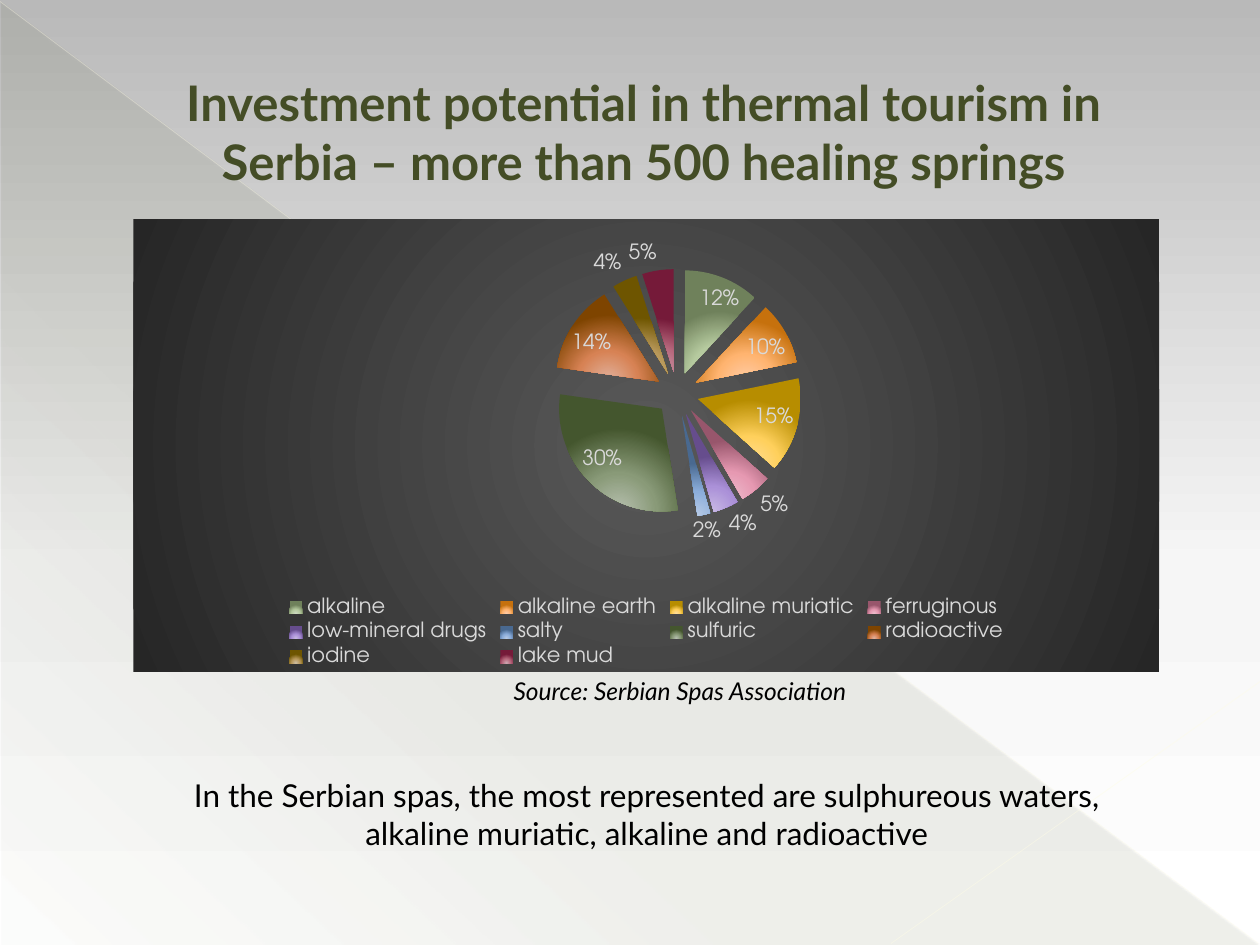
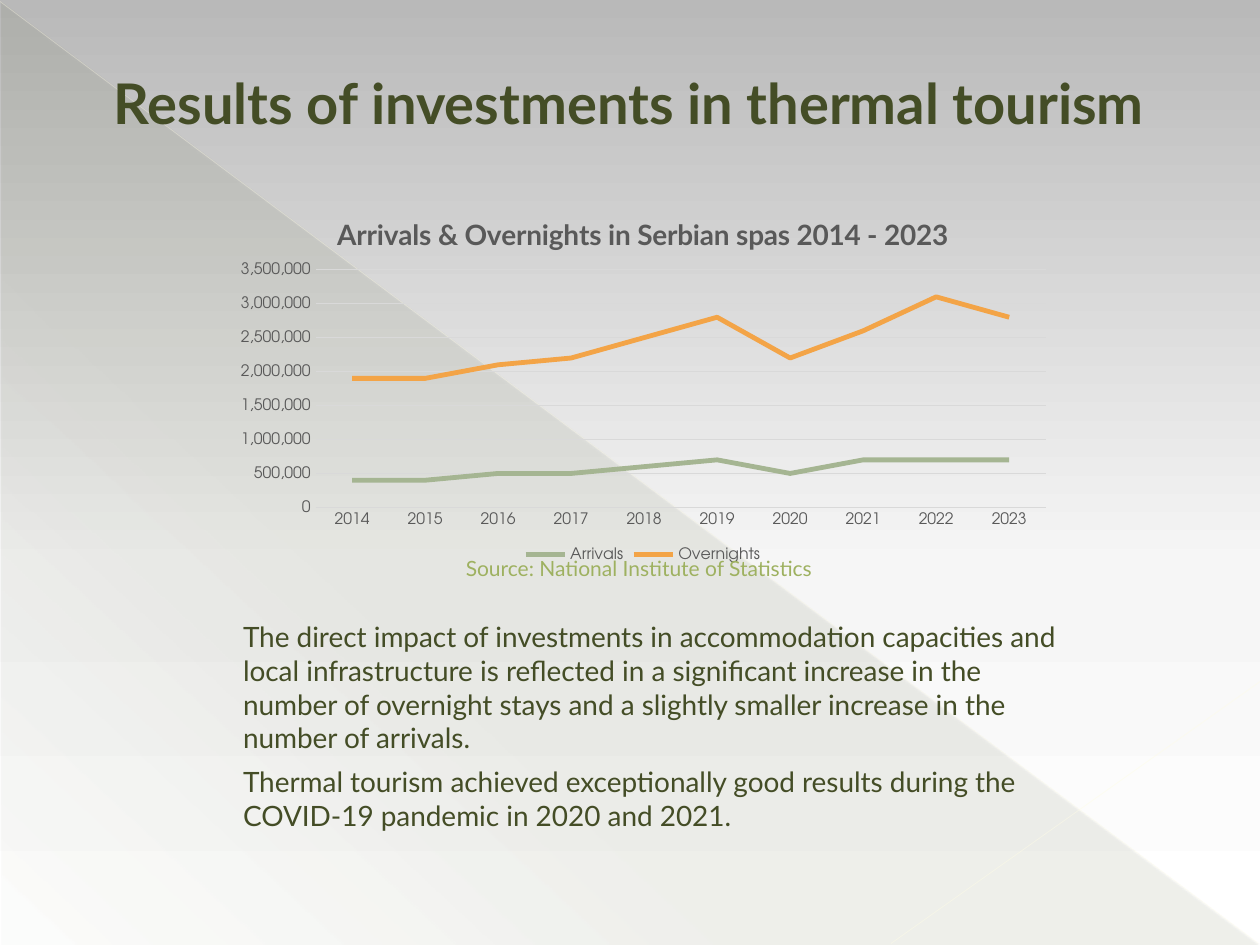
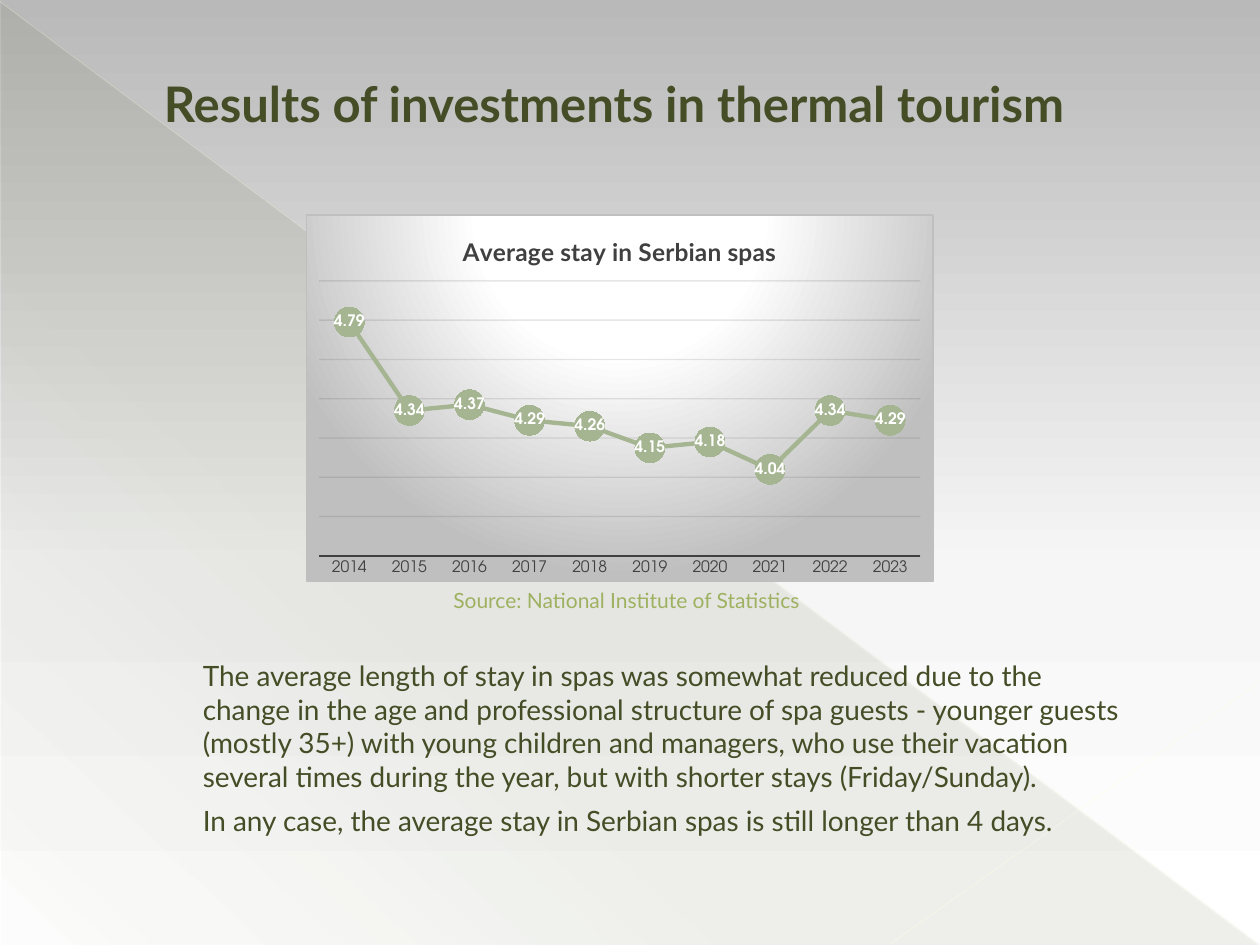
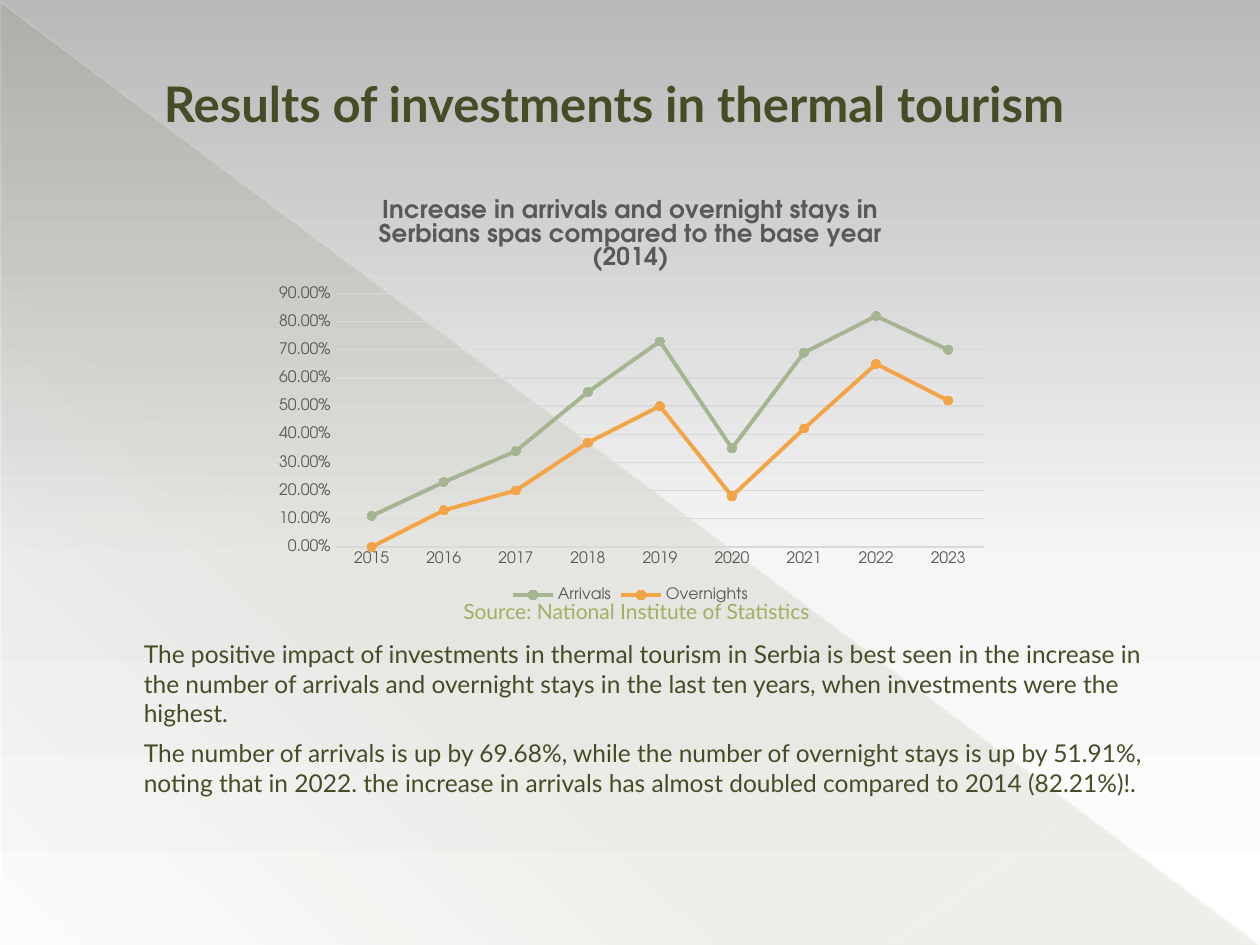
from collections import namedtuple

from pptx import Presentation
from pptx.chart.data import CategoryChartData
from pptx.dml import color, fill as fills, line as lines
from pptx.enum import chart as ch, shapes as sh, text as tx
from pptx.oxml import xmlchemy
from pptx.oxml.ns import qn
from pptx.util import Cm, Pt

RGB = color.RGBColor
Box = namedtuple("Box", "left top width height")
Stop = namedtuple("Stop", "place color alpha", defaults=(100,))
Area = namedtuple("Area", "x y w h")

OLIVE = RGB(0x44, 0x4D, 0x26)
MOSS = RGB(0x9E, 0xB1, 0x60)
SAGE = RGB(0xA5, 0xB5, 0x92)
ORANGE = RGB(0xF3, 0xA4, 0x47)
CREAM = RGB(0xFF, 0xFD, 0xE3)
PALE_CREAM = RGB(0xFF, 0xFD, 0xE6)
BLACK = RGB(0, 0, 0)
INK = RGB(0x0D, 0x0D, 0x0D)
CHARCOAL = RGB(0x26, 0x26, 0x26)
DARK_GREY = RGB(0x40, 0x40, 0x40)
GREY = RGB(0x59, 0x59, 0x59)
MIST = RGB(0xB9, 0xB9, 0xB9)
SILVER = RGB(0xBF, 0xBF, 0xBF)
LIGHT_GREY = RGB(0xD9, 0xD9, 0xD9)
SNOW = RGB(0xF6, 0xF6, 0xF6)
WHITE = RGB(0xFF, 0xFF, 0xFF)

TEXT_FONT = "Lato"
CHART_FONT = "TeX Gyre Adventor"
INDENT = Cm(1.35)
RESULTS_TITLE = "Results of investments in thermal tourism"
STATISTICS = "Source: National Institute of Statistics"
YEARS = [str(year) for year in range(2014, 2024)]

SPRINGS = [
    ("alkaline", 12, "CFDBC3", "B6CA9F", "6F815B"),
    ("alkaline earth", 10, "FFCEAA", "FFB470", "C6710D"),
    ("alkaline muriatic", 15, "FFDF9F", "FFD05C", "B78D00"),
    ("ferruginous", 5, "EDBECD", "E699B2", "98566C"),
    ("low-mineral drugs", 4, "C9BAE4", "AB91D8", "664D8D"),
    ("salty", 2, "B8CBE6", "8CAEDB", "496990"),
    ("sulfuric", 30, "B7C0B0", "899A78", "44562E"),
    ("radioactive", 14, "E1B39F", "D78254", "7E4400"),
    ("iodine", 4, "D0BFA3", "B9995B", "6E5500"),
    ("lake mud", 5, "CFA8B2", "B8697E", "751A39"),
]


def child(parent, tag, **attributes):
    """Append an XML element with the given attributes."""
    element = xmlchemy.OxmlElement(tag)
    for name, value in attributes.items():
        element.set(name, str(value))
    parent.append(element)
    return element


def add_alpha(rgb_element, percent):
    """Make a colour element partly transparent."""
    child(rgb_element, "a:alpha", val=percent * 1000)


def paint_gradient(fill, stops, angle=None, focus=None):
    """Fill with a linear gradient, or a circular one around a focus."""
    fill.solid()
    gradient = xmlchemy.OxmlElement("a:gradFill")
    gradient.set("rotWithShape", "1")
    stop_list = child(gradient, "a:gsLst")
    for stop in stops:
        mark = child(stop_list, "a:gs", pos=stop.place * 1000)
        tone = child(mark, "a:srgbClr", val=stop.color)
        if stop.alpha < 100:
            add_alpha(tone, stop.alpha)
    if focus:
        circle = child(gradient, "a:path", path="circle")
        sides = {side: percent * 1000 for side, percent in zip("ltrb", focus)}
        child(circle, "a:fillToRect", **sides)
    else:
        child(gradient, "a:lin", ang=angle * 60000, scaled=0)
    solid = fill._xPr.find(qn("a:solidFill"))
    solid.getparent().replace(solid, gradient)


def style_line(line, tone, width, alpha=100):
    """Set colour, width and opacity of a line."""
    line.color.rgb = tone
    line.width = Pt(width)
    if alpha < 100:
        add_alpha(line._ln.find(".//" + qn("a:srgbClr")), alpha)


def style_font(font, size, tone, name=TEXT_FONT, bold=False, italic=False):
    """Set the look of a font."""
    font.name = name
    font.size = Pt(size)
    font.color.rgb = tone
    font.bold = bold
    font.italic = italic


def decorate_master(master, slide):
    """Give the master its sky gradient, triangle and two thin rays."""
    paint_gradient(master.background.fill,
                   [Stop(0, MIST), Stop(60, SNOW), Stop(100, WHITE)], angle=90)
    triangle = slide.shapes.add_shape(
        sh.MSO_SHAPE.RIGHT_TRIANGLE, Cm(0.03), Cm(0.05), Cm(25.35), Cm(19))
    triangle.shadow.inherit = False
    triangle.line.fill.background()
    paint_gradient(triangle.fill, [Stop(0, OLIVE, 10), Stop(70, OLIVE, 8),
                                   Stop(100, OLIVE, 1)], angle=133)
    decor = [triangle]
    for ends, tone, width, alpha in [
            ((0, 0.03, 25.37, 19.02), CREAM, 0.39, 35),
            ((25.4, 13.74, 17.96, 19.02), PALE_CREAM, 0.47, 45)]:
        ray = slide.shapes.add_connector(
            sh.MSO_CONNECTOR.STRAIGHT, *[Cm(end) for end in ends])
        style_line(ray.line, tone, width, alpha)
        child(ray._element.spPr, "a:effectLst")
        decor.append(ray)
    for order, part in enumerate(decor):
        part._element.xpath(".//p:cNvPr")[0].set("id", str(101 + order))
        master.shapes._spTree.insert(2 + order, part._element)


def place_title(slide, box, words, size, align=tx.PP_ALIGN.LEFT):
    """Move and format the title placeholder."""
    title = slide.shapes.title
    title.left, title.top, title.width, title.height = map(Cm, box)
    frame = title.text_frame
    frame.text = words
    frame.word_wrap = True
    frame.auto_size = tx.MSO_AUTO_SIZE.NONE
    frame.vertical_anchor = tx.MSO_ANCHOR.MIDDLE
    heading = frame.paragraphs[0]
    heading.alignment = align
    heading._p.get_or_add_pPr().set("marL", str(INDENT))
    style_font(heading.runs[0].font, size, OLIVE, bold=True)


def place_text(slide, box, words, size, tone, align=tx.PP_ALIGN.LEFT,
               anchor=tx.MSO_ANCHOR.TOP, indent=0, italic=False):
    """Write paragraphs into a text box."""
    frame = slide.shapes.add_textbox(*map(Cm, box)).text_frame
    frame.word_wrap = True
    frame.vertical_anchor = anchor
    frame.text = "\n".join(words)
    for paragraph in frame.paragraphs:
        paragraph.alignment = align
        paragraph.space_after = Pt(6 if indent else 0)
        paragraph._p.get_or_add_pPr().set("marL", str(indent))
        style_font(paragraph.runs[0].font, size, tone, italic=italic)


def place_chart(slide, box, kind, categories, series, area):
    """Add a chart with a clear background and a fixed plot area."""
    data = CategoryChartData()
    data.categories = categories
    for name, values in series:
        data.add_series(name, values)
    chart = slide.shapes.add_chart(kind, *map(Cm, box), data).chart
    style_font(chart.font, 10, BLACK, CHART_FONT)
    chart.has_title = False
    chart.has_legend = False
    plot_area = chart._chartSpace.chart.plotArea
    for old in plot_area.findall(qn("c:layout")):
        plot_area.remove(old)
    layout = xmlchemy.OxmlElement("c:layout")
    manual = child(layout, "c:manualLayout")
    child(manual, "c:layoutTarget", val="inner")
    for side in "xy":
        child(manual, f"c:{side}Mode", val="edge")
    for side, share in area._asdict().items():
        child(manual, f"c:{side}", val=share)
    plot_area.insert(0, layout)
    backdrop = xmlchemy.OxmlElement("c:spPr")
    chart._chartSpace.chart.addnext(backdrop)
    backdrop_fill = fills.FillFormat.from_fill_parent(backdrop)
    backdrop_fill.background()
    border = lines.LineFormat(backdrop)
    border.fill.background()
    return chart, backdrop_fill, border


def show_legend(chart, size, tone):
    """Put the legend under the plot."""
    chart.has_legend = True
    chart.legend.position = ch.XL_LEGEND_POSITION.BOTTOM
    chart.legend.include_in_layout = False
    style_font(chart.legend.font, size, tone, CHART_FONT)


def show_chart_title(chart, words, size, tone, font):
    """Write the chart title."""
    chart.has_title = True
    chart.chart_title.include_in_layout = False
    frame = chart.chart_title.text_frame
    frame.text = words
    style_font(frame.paragraphs[0].runs[0].font, size, tone, font, bold=True)


def style_axes(chart, tone, base, base_width, number_format, scale):
    """Format both axes; scale is minimum, maximum and step."""
    years, amounts = chart.category_axis, chart.value_axis
    for axis in (years, amounts):
        axis.major_tick_mark = axis.minor_tick_mark = ch.XL_TICK_MARK.NONE
        style_font(axis.tick_labels.font, 9, tone, CHART_FONT)
    style_line(years.format.line, base, base_width)
    amounts.format.line.fill.background()
    amounts.tick_labels.number_format = number_format
    amounts.tick_labels.number_format_is_linked = False
    amounts.minimum_scale, amounts.maximum_scale, amounts.major_unit = scale
    amounts.has_major_gridlines = True
    style_line(amounts.major_gridlines.format.line, LIGHT_GREY, 0.75)


def style_series(chart, width, marker_size=0):
    """Colour the lines and their round markers."""
    for series, tone in zip(chart.plots[0].series, (SAGE, ORANGE)):
        series.smooth = False
        style_line(series.format.line, tone, width)
        marker = series.marker
        if not marker_size:
            marker.style = ch.XL_MARKER_STYLE.NONE
            continue
        marker.style = ch.XL_MARKER_STYLE.CIRCLE
        marker.size = marker_size
        marker.format.fill.solid()
        marker.format.fill.fore_color.rgb = tone
        marker.format.line.color.rgb = tone


def springs_chart(slide, box):
    """Draw the exploded pie of healing springs on a dark panel."""
    names = [spring[0] for spring in SPRINGS]
    shares = [spring[1] for spring in SPRINGS]
    chart, panel, _ = place_chart(
        slide, box, ch.XL_CHART_TYPE.PIE, names, [("Series 1", shares)],
        Area(0.22, 0.11, 0.62, 0.55))
    paint_gradient(panel, [Stop(0, GREY), Stop(100, CHARCOAL)],
                   focus=(50, 50, 50, 50))
    show_legend(chart, 12, LIGHT_GREY)
    pie = chart.plots[0]
    pie.vary_by_categories = True
    slices = pie.series[0]
    for order, (_, _, *tones) in enumerate(SPRINGS):
        paint_gradient(slices.points[order].format.fill,
                       [Stop(*pair) for pair in zip((0, 46, 100), tones)],
                       focus=(50, 155, 50, -55))
    explosion = xmlchemy.OxmlElement("c:explosion")
    explosion.set("val", "21")
    slices._element.find(qn("c:tx")).addnext(explosion)
    pie.has_data_labels = True
    labels = pie.data_labels
    labels.show_value = False
    labels.show_percentage = True
    labels.number_format = "0%"
    labels.number_format_is_linked = False
    labels.position = ch.XL_LABEL_POSITION.BEST_FIT
    style_font(labels.font, 12, LIGHT_GREY, CHART_FONT)


def visits_chart(slide, box):
    """Draw arrivals and overnights per year."""
    hundred_thousands = [
        ("Arrivals", [4, 4, 5, 5, 6, 7, 5, 7, 7, 7]),
        ("Overnights", [19, 19, 21, 22, 25, 28, 22, 26, 31, 28])]
    visits = [(name, [value * 100000 for value in values])
              for name, values in hundred_thousands]
    chart, _, _ = place_chart(slide, box, ch.XL_CHART_TYPE.LINE, YEARS, visits,
                              Area(0.11, 0.2, 0.87, 0.64))
    show_chart_title(chart, "Arrivals & Overnights in Serbian spas 2014 - 2023",
                     16, GREY, TEXT_FONT)
    show_legend(chart, 9, GREY)
    style_axes(chart, GREY, LIGHT_GREY, 1, "#,##0", (0, 3500000, 500000))
    style_series(chart, 2.75)


def stay_chart(slide, box):
    """Draw the average stay with its values inside large markers."""
    days = [4.79, 4.34, 4.37, 4.29, 4.26, 4.15, 4.18, 4.04, 4.34, 4.29]
    chart, panel, border = place_chart(
        slide, box, ch.XL_CHART_TYPE.LINE_MARKERS_STACKED, YEARS,
        [("Series 1", days)], Area(0.02, 0.18, 0.96, 0.75))
    paint_gradient(panel, [Stop(0, WHITE), Stop(39, WHITE), Stop(100, SILVER)],
                   focus=(50, -80, 50, 180))
    style_line(border, SILVER, 0.75)
    show_chart_title(chart, "Average stay in Serbian spas", 14, DARK_GREY,
                     TEXT_FONT)
    style_axes(chart, DARK_GREY, DARK_GREY, 1.5, "#,##0.00", (3.6, 5, 0.2))
    chart.value_axis.visible = False
    style_line(chart.value_axis.major_gridlines.format.line, INK, 0.75, 10)
    style_series(chart, 2.5, 17)
    chart.plots[0].has_data_labels = True
    labels = chart.plots[0].data_labels
    labels.show_value = True
    labels.number_format = "#,##0.00"
    labels.number_format_is_linked = False
    labels.position = ch.XL_LABEL_POSITION.CENTER
    style_font(labels.font, 9, WHITE, CHART_FONT, bold=True)


def growth_chart(slide, box):
    """Draw the growth of arrivals and overnights since the base year."""
    growth = [
        ("Arrivals", [0.11, 0.23, 0.34, 0.55, 0.73, 0.35, 0.69, 0.82, 0.7]),
        ("Overnights", [0, 0.13, 0.2, 0.37, 0.5, 0.18, 0.42, 0.65, 0.52])]
    chart, _, _ = place_chart(slide, box, ch.XL_CHART_TYPE.LINE_MARKERS,
                              YEARS[1:], growth, Area(0.1, 0.27, 0.88, 0.59))
    show_chart_title(chart, "Increase in arrivals and overnight stays in Serbians "
                     "spas compared to the base year (2014)", 14, GREY, CHART_FONT)
    show_legend(chart, 9, GREY)
    style_axes(chart, GREY, LIGHT_GREY, 0.75, "0.00%", (0, 0.9, 0.1))
    style_series(chart, 2.25, 5)


def potential_slide(slide):
    """Fill the slide about the healing springs."""
    center = tx.PP_ALIGN.CENTER
    place_title(slide, Box(0.89, 1.12, 22.81, 3.07),
                "Investment potential in thermal tourism in Serbia – more than "
                "500 healing springs", 28, center)
    springs_chart(slide, Box(2.69, 4.42, 20.68, 9.12))
    place_text(slide, Box(3.3, 15.52, 19.48, 1.8),
               ["In the Serbian spas, the most represented are sulphureous waters, "
                "alkaline muriatic, alkaline and radioactive"], 18, BLACK, center)
    place_text(slide, Box(8.31, 13.51, 10.8, 0.86),
               ["Source: Serbian Spas Association"], 14, BLACK, center, italic=True)


def results_slide(slide, title_box, title_size, draw_chart, chart_box,
                  source_corner, body_box, body_size, body):
    """Fill a results slide: title, chart, source line and comments."""
    place_title(slide, title_box, RESULTS_TITLE, title_size)
    draw_chart(slide, chart_box)
    place_text(slide, body_box, body, body_size, OLIVE,
               anchor=tx.MSO_ANCHOR.MIDDLE, indent=INDENT)
    place_text(slide, Box(*source_corner, 7.59, 0.76), [STATISTICS], 12, MOSS)


def main():
    """Build the four slides and save them."""
    deck = Presentation()
    deck.slide_width, deck.slide_height = Cm(25.4), Cm(19.05)
    title_only = deck.slide_layouts[5]
    potential, visits, stay, growth = [
        deck.slides.add_slide(title_only) for _ in range(4)]
    decorate_master(deck.slide_master, potential)
    potential_slide(potential)
    results_slide(
        visits, Box(0.69, 0.53, 24.03, 3.07), 32,
        visits_chart, Box(4.5, 3.94, 16.92, 7.49), (9.14, 11.07),
        Box(3.3, 12.12, 18.39, 5.03), 16,
        ["The direct impact of investments in accommodation capacities and local "
         "infrastructure is reflected in a significant increase in the number of "
         "overnight stays and a slightly smaller increase in the number of arrivals.",
         "Thermal tourism achieved exceptionally good results during the COVID-19 "
         "pandemic in 2020 and 2021."])
    narrow_title = Box(1.7, 0.53, 22.02, 3.07)
    results_slide(
        stay, narrow_title, 28,
        stay_chart, Box(6.17, 4.32, 12.65, 7.42), (8.89, 11.71),
        Box(2.49, 12.47, 20.4, 5.21), 16,
        ["The average length of stay in spas was somewhat reduced due to the change "
         "in the age and professional structure of spa guests - younger guests "
         "(mostly 35+) with young children and managers, who use their vacation "
         "several times during the year, but with shorter stays (Friday/Sunday).",
         "In any case, the average stay in Serbian spas is still longer than 4 days."])
    results_slide(
        growth, narrow_title, 28,
        growth_chart, Box(5.28, 3.58, 14.86, 8.66), (9.09, 11.94),
        Box(1.3, 12.32, 22.81, 4.32), 14,
        ["The positive impact of investments in thermal tourism in Serbia is best "
         "seen in the increase in the number of arrivals and overnight stays in the "
         "last ten years, when investments were the highest.",
         "The number of arrivals is up by 69.68%, while the number of overnight stays "
         "is up by 51.91%, noting that in 2022. the increase in arrivals has almost "
         "doubled compared to 2014 (82.21%)!."])
    deck.save("out.pptx")


if __name__ == "__main__":
    main()
